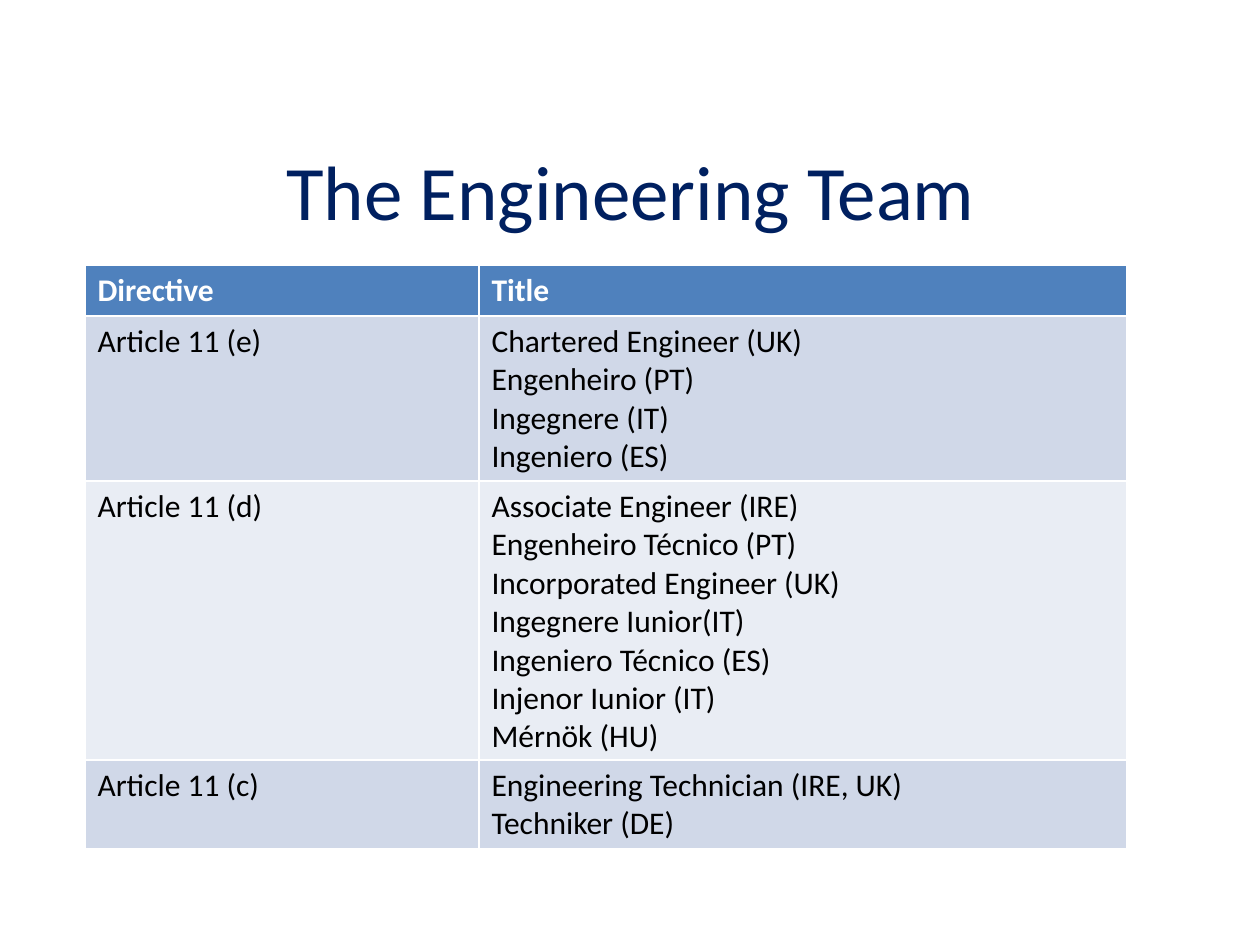
import pptx
import pptx.dml.color
import pptx.enum.text
import pptx.util

PX = 914400 // 126  # EMU per px

THEME = {
    "font": "Calibri",
    "title_size": 44,
    "table_size": 18,
    "title": "002060",
    "header_text": "FFFFFF",
    "body_text": "000000",
    "header_fill": "4F81BD",
    "bands": ["D0D8E8", "E9EDF4"],
}

ROWS = [
    ("Directive", ["Title"]),
    ("Article 11 (e)", [
        "Chartered Engineer (UK)", "Engenheiro (PT)",
        "Ingegnere (IT)", "Ingeniero (ES)"]),
    ("Article 11 (d)", [
        "Associate Engineer (IRE)", "Engenheiro Técnico (PT)",
        "Incorporated Engineer (UK)", "Ingegnere Iunior(IT)",
        "Ingeniero Técnico (ES)", "Injenor Iunior (IT)", "Mérnök (HU)"]),
    ("Article 11 (c)", ["Engineering Technician (IRE, UK)", "Techniker (DE)"]),
]
COLUMN_WIDTHS = [394, 648]
LINE_HEIGHT, CELL_PADDING = 38, 13


def rgb(name):
    return pptx.dml.color.RGBColor.from_string(name)


def style_text(text_frame, size, color, bold=False):
    for paragraph in text_frame.paragraphs:
        for run in paragraph.runs:
            run.font.name = THEME["font"]
            run.font.size = pptx.util.Pt(size)
            run.font.bold = bold
            run.font.color.rgb = rgb(color)


presentation = pptx.Presentation()
presentation.slide_width = 1260 * PX
presentation.slide_height = 945 * PX
slide = presentation.slides.add_slide(presentation.slide_layouts[6])

# Title
title = slide.shapes.add_textbox(64 * PX, 145 * PX, 1134 * PX, 90 * PX)
text_frame = title.text_frame
text_frame.word_wrap = True
text_frame.vertical_anchor = pptx.enum.text.MSO_ANCHOR.MIDDLE
text_frame.text = "The Engineering Team"
text_frame.paragraphs[0].alignment = pptx.enum.text.PP_ALIGN.CENTER
style_text(text_frame, THEME["title_size"], THEME["title"])

# Table: each row is as tall as its list of titles
heights = [LINE_HEIGHT * len(titles) + CELL_PADDING for _, titles in ROWS]
table = slide.shapes.add_table(
    len(ROWS), len(COLUMN_WIDTHS), 85 * PX, 265 * PX,
    sum(COLUMN_WIDTHS) * PX, sum(heights) * PX).table
for column, width in zip(table.columns, COLUMN_WIDTHS):
    column.width = width * PX

for index, (directive, titles) in enumerate(ROWS):
    table.rows[index].height = heights[index] * PX
    header = index == 0
    fill = THEME["header_fill"] if header else THEME["bands"][(index - 1) % 2]
    color = THEME["header_text"] if header else THEME["body_text"]
    for cell, text in zip(table.rows[index].cells, (directive, "\n".join(titles))):
        cell.fill.solid()
        cell.fill.fore_color.rgb = rgb(fill)
        cell.text_frame.text = text
        style_text(cell.text_frame, THEME["table_size"], color, bold=header)

presentation.save("out.pptx")
